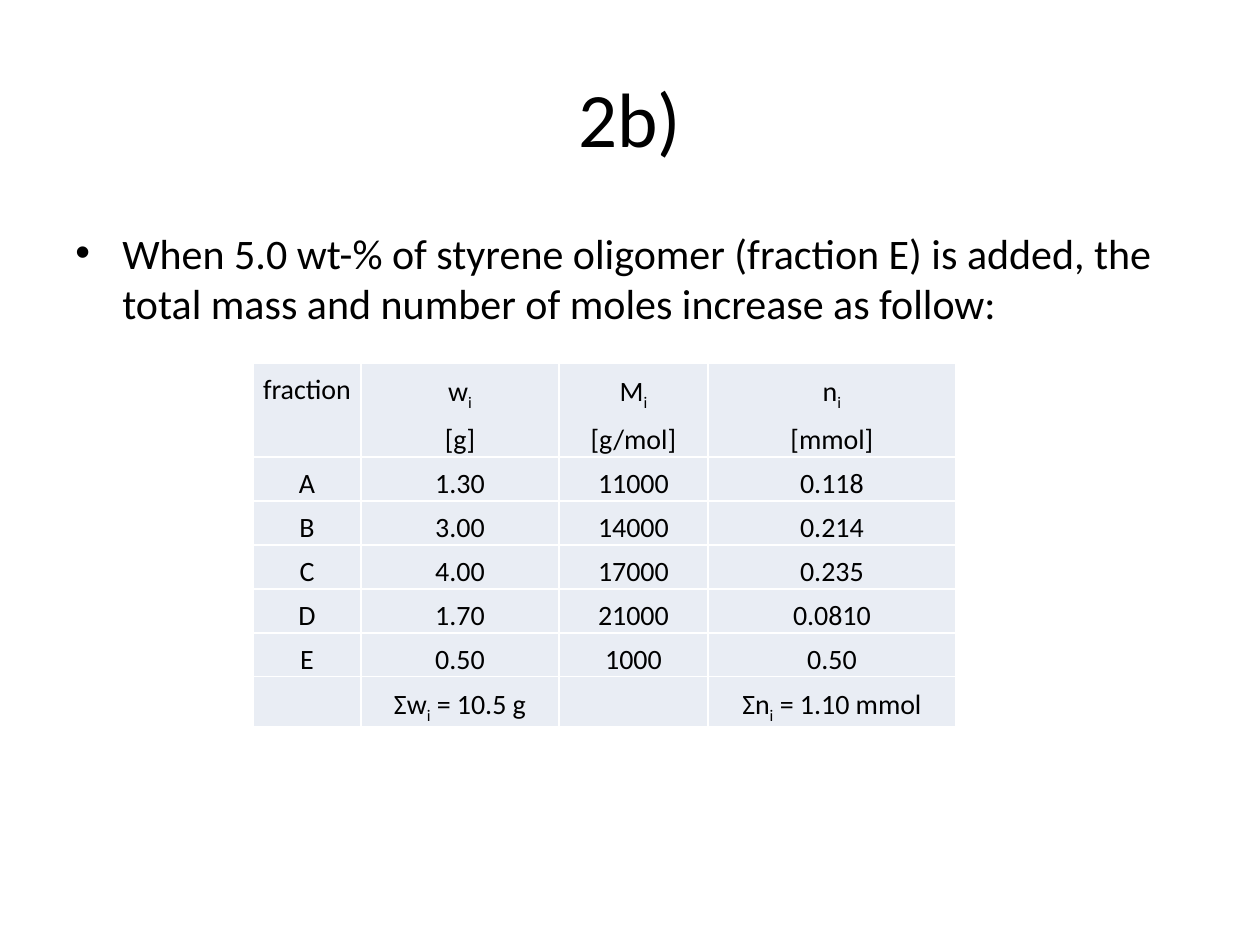
from dataclasses import dataclass

from lxml import etree
from pptx import Presentation
from pptx.dml.color import RGBColor
from pptx.enum.text import MSO_ANCHOR, PP_ALIGN
from pptx.oxml.ns import qn
from pptx.util import Emu, Pt

CENTER, LEFT = PP_ALIGN.CENTER, PP_ALIGN.LEFT
TOP, MIDDLE = MSO_ANCHOR.TOP, MSO_ANCHOR.MIDDLE
BLANK_LAYOUT = 6
EMU_PER_PX = 914400 / 126


@dataclass(frozen=True)
class Theme:
    font: str = "Calibri"
    text: str = "000000"
    cell: str = "E9EDF4"
    border: str = "FFFFFF"
    border_pt: int = 1
    title_pt: int = 44
    body_pt: int = 24
    table_pt: int = 16
    table_spacing: float = 1.3


THEME = Theme()

# Within a cell, "|" starts a paragraph and "_i" is a subscript i
FRACTIONS = [
    ["fraction", "w_i|[g]", "M_i|[g/mol]", "n_i|[mmol]"],
    ["A", "1.30", "11000", "0.118"],
    ["B", "3.00", "14000", "0.214"],
    ["C", "4.00", "17000", "0.235"],
    ["D", "1.70", "21000", "0.0810"],
    ["E", "0.50", "1000", "0.50"],
    ["", "Σw_i = 10.5 g", "", "Σn_i = 1.10 mmol"],
]
COLUMN_WIDTHS = [108, 198, 149, 248]
ROW_HEIGHTS = [94] + [44] * 5 + [49]


def px(length):
    return Emu(round(length * EMU_PER_PX))


def add_run(paragraph, text, size, subscript=False):
    run = paragraph.add_run()
    run.text = text
    run.font.name = THEME.font
    run.font.size = Pt(size)
    run.font.color.rgb = RGBColor.from_string(THEME.text)
    if subscript:
        run.font._element.set("baseline", "-25000")


def add_text(slide, box, text, size, align=LEFT, anchor=TOP, bullet_indent=0):
    shape = slide.shapes.add_textbox(*map(px, box))
    frame = shape.text_frame
    frame.word_wrap = True
    frame.vertical_anchor = anchor
    paragraph = frame.paragraphs[0]
    paragraph.alignment = align
    if bullet_indent:
        properties = paragraph._p.get_or_add_pPr()
        properties.set("marL", str(px(bullet_indent)))
        properties.set("indent", str(-px(bullet_indent)))
        etree.SubElement(properties, qn("a:buFont"), typeface="Arial")
        etree.SubElement(properties, qn("a:buChar"), char="•")
    add_run(paragraph, text, size)


def add_borders(cell):
    properties = cell._tc.get_or_add_tcPr()
    for index, side in enumerate(("a:lnL", "a:lnR", "a:lnT", "a:lnB")):
        line = etree.Element(qn(side), w=str(Pt(THEME.border_pt)))
        fill = etree.SubElement(line, qn("a:solidFill"))
        etree.SubElement(fill, qn("a:srgbClr"), val=THEME.border)
        properties.insert(index, line)


def fill_cell(cell, text):
    cell.margin_left = cell.margin_right = px(9)
    cell.margin_top = cell.margin_bottom = 0
    cell.fill.solid()
    cell.fill.fore_color.rgb = RGBColor.from_string(THEME.cell)
    add_borders(cell)
    if not text:
        return
    frame = cell.text_frame
    for number, line in enumerate(text.split("|")):
        paragraph = frame.add_paragraph() if number else frame.paragraphs[0]
        paragraph.alignment = CENTER
        paragraph.line_spacing = THEME.table_spacing
        symbol, subscript, rest = line.partition("_i")
        add_run(paragraph, symbol, THEME.table_pt)
        if subscript:
            add_run(paragraph, "i", THEME.table_pt, subscript=True)
        if rest:
            add_run(paragraph, rest, THEME.table_pt)


def add_table(slide, left, top, rows, widths, heights):
    box = map(px, (left, top, sum(widths), sum(heights)))
    table = slide.shapes.add_table(len(rows), len(widths), *box).table
    table.first_row = table.horz_banding = False
    for column, width in zip(table.columns, widths):
        column.width = px(width)
    for row, height, texts in zip(table.rows, heights, rows):
        row.height = px(height)
        for cell, text in zip(row.cells, texts):
            fill_cell(cell, text)


def main():
    presentation = Presentation()
    presentation.slide_width, presentation.slide_height = px(1260), px(945)
    slide = presentation.slides.add_slide(presentation.slide_layouts[BLANK_LAYOUT])

    # Title
    add_text(slide, (63, 38, 1134, 157), "2b)", THEME.title_pt, CENTER, MIDDLE)

    # Explanation
    add_text(slide, (63, 221, 1134, 624),
             "When 5.0 wt-% of styrene oligomer (fraction E) is added, the "
             "total mass and number of moles increase as follow:",
             THEME.body_pt, bullet_indent=47)

    # Mass and moles of each fraction
    add_table(slide, 253, 363, FRACTIONS, COLUMN_WIDTHS, ROW_HEIGHTS)

    presentation.save("out.pptx")


if __name__ == "__main__":
    main()
